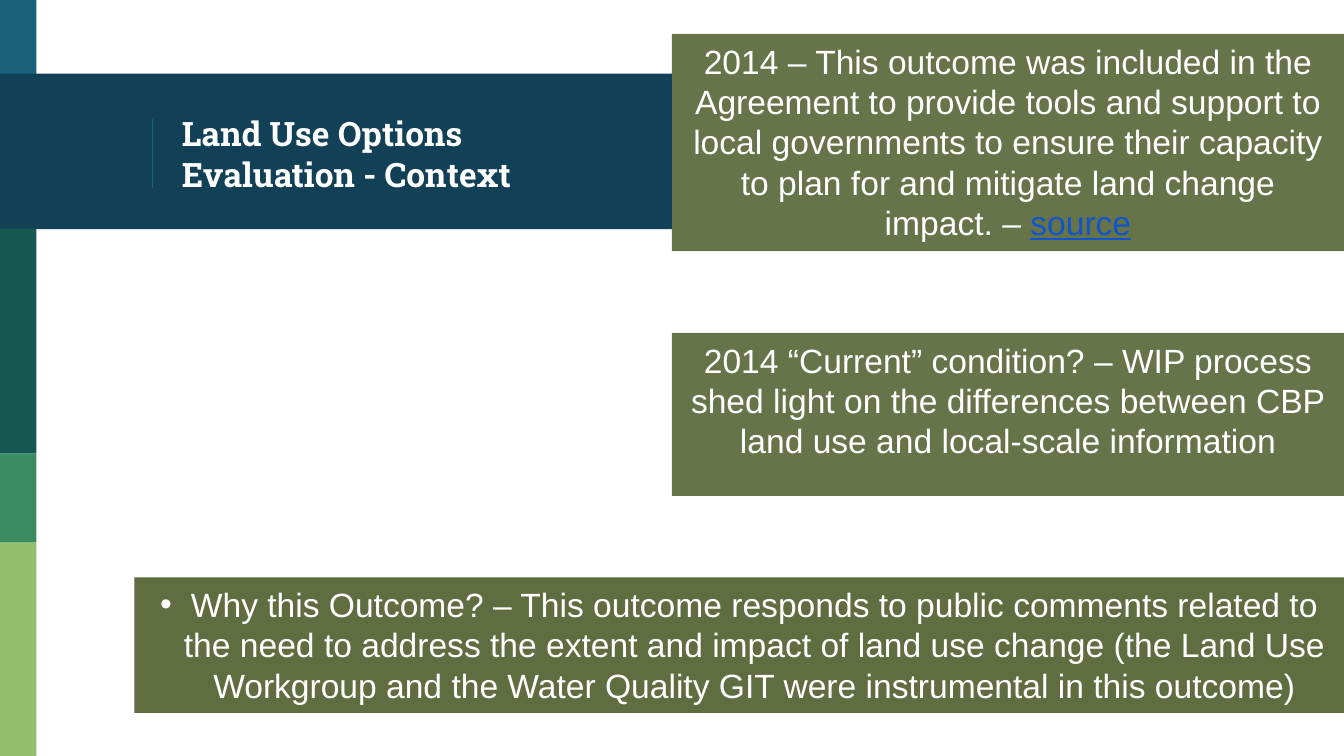
from dataclasses import dataclass

from lxml import etree
from pptx import Presentation
from pptx.dml.color import RGBColor
from pptx.enum.shapes import MSO_CONNECTOR, MSO_SHAPE
from pptx.enum.text import MSO_ANCHOR, PP_ALIGN
from pptx.oxml.ns import qn
from pptx.util import Pt

RECTANGLE = MSO_SHAPE.RECTANGLE
STRAIGHT = MSO_CONNECTOR.STRAIGHT
TOP, MIDDLE = MSO_ANCHOR.TOP, MSO_ANCHOR.MIDDLE
LEFT, CENTER = PP_ALIGN.LEFT, PP_ALIGN.CENTER

COLORS = {
    "blue": "18637B",
    "navy": "124057",
    "teal": "165751",
    "green": "3B8D61",
    "lime": "94BF6E",
    "olive": "465621",
    "white": "FFFFFF",
    "link": "1155CC",
}
SLIDE_WIDTH, SLIDE_HEIGHT = 720, 405
STRIPE_WIDTH = 19.5
TEXT_SIZE = 18
LINE_PITCH = 1.2 * TEXT_SIZE
BULLET_INDENT = 16.5


@dataclass
class Block:
    left: float
    top: float
    width: float
    height: float
    color: str
    opacity: int = 100


@dataclass
class Note:
    block: Block
    text: str
    link: str = ""
    bullet: bool = False


# Side stripe and title band, from back to front
BLOCKS = [
    Block(0, 0, STRIPE_WIDTH, 42, "blue"),
    Block(0, 39.4, 360, 83.3, "navy"),
    Block(0, 122.5, STRIPE_WIDTH, 120.5, "teal"),
    Block(0, 243, STRIPE_WIDTH, 47.7, "green"),
    Block(0, 290.7, STRIPE_WIDTH, SLIDE_HEIGHT - 290.7, "lime"),
]

NOTES = [
    Note(
        Block(360, 178.4, 360, 87.3, "olive", 82),
        "2014 “Current” condition? – WIP process shed light on the differences "
        "between CBP land use and local-scale information",
    ),
    Note(
        Block(360, 18.2, 360, 116.3, "olive", 82),
        "2014 – This outcome was included in the Agreement to provide tools and "
        "support to local governments to ensure their capacity to plan for and "
        "mitigate land change impact. – ",
        link="source",
    ),
    Note(
        Block(72, 309.3, 648, 72.7, "olive", 86),
        "Why this Outcome? – This outcome responds to public comments related to "
        "the need to address the extent and impact of land use change (the Land "
        "Use Workgroup and the Water Quality GIT were instrumental in this outcome)",
        bullet=True,
    ),
]


def rgb(name: str) -> RGBColor:
    return RGBColor.from_string(COLORS[name])


def add_block(slide, block: Block):
    shape = slide.shapes.add_shape(
        RECTANGLE, Pt(block.left), Pt(block.top), Pt(block.width), Pt(block.height)
    )
    shape.shadow.inherit = False
    shape.line.fill.background()
    shape.fill.solid()
    shape.fill.fore_color.rgb = rgb(block.color)
    if block.opacity < 100:
        color = shape._element.spPr.find(qn("a:solidFill"))[0]
        etree.SubElement(color, qn("a:alpha"), val=str(block.opacity * 1000))
    return shape


def add_run(paragraph, text: str, *, font: str = "Arial", color: str = "white",
            bold: bool = False, underline: bool = False) -> None:
    run = paragraph.add_run()
    run.text = text
    run.font.name = font
    run.font.size = Pt(TEXT_SIZE)
    run.font.bold = bold
    run.font.underline = underline
    run.font.color.rgb = rgb(color)


def prepare_paragraph(shape, *, anchor, alignment, margin_x: float, margin_y: float):
    frame = shape.text_frame
    frame.word_wrap = True
    frame.vertical_anchor = anchor
    frame.margin_left = frame.margin_right = Pt(margin_x)
    frame.margin_top = frame.margin_bottom = Pt(margin_y)
    paragraph = frame.paragraphs[0]
    paragraph.alignment = alignment
    paragraph.line_spacing = Pt(LINE_PITCH)
    return paragraph


def add_bullet(paragraph) -> None:
    properties = paragraph._p.get_or_add_pPr()
    properties.set("marL", str(Pt(BULLET_INDENT)))
    properties.set("indent", str(-Pt(BULLET_INDENT)))
    etree.SubElement(properties, qn("a:buFont"), typeface="Arial")
    etree.SubElement(properties, qn("a:buChar"), char="•")


def add_note(slide, note: Note) -> None:
    shape = add_block(slide, note.block)
    paragraph = prepare_paragraph(
        shape, anchor=TOP, alignment=CENTER, margin_x=7.2, margin_y=3.6
    )
    if note.bullet:
        add_bullet(paragraph)
    add_run(paragraph, note.text)
    if note.link:
        add_run(paragraph, note.link, color="link", underline=True)


def add_title(slide, text: str) -> None:
    # Thin rule left of the title
    rule = slide.shapes.add_connector(STRAIGHT, Pt(81.6), Pt(64), Pt(81.6), Pt(100.8))
    rule.line.color.rgb = rgb("blue")
    rule.line.width = Pt(0.75)
    etree.SubElement(rule._element.spPr, qn("a:effectLst"))

    title = slide.shapes.add_textbox(Pt(90.3), Pt(42), Pt(252.7), Pt(80.6))
    paragraph = prepare_paragraph(
        title, anchor=MIDDLE, alignment=LEFT, margin_x=7.2, margin_y=7.2
    )
    add_run(paragraph, text, font="Roboto Slab", bold=True)


def main() -> None:
    presentation = Presentation()
    presentation.slide_width = Pt(SLIDE_WIDTH)
    presentation.slide_height = Pt(SLIDE_HEIGHT)
    slide = presentation.slides.add_slide(presentation.slide_layouts[6])

    for block in BLOCKS:
        add_block(slide, block)
    add_title(slide, "Land Use Options Evaluation - Context")
    for note in NOTES:
        add_note(slide, note)

    presentation.save("out.pptx")


if __name__ == "__main__":
    main()
